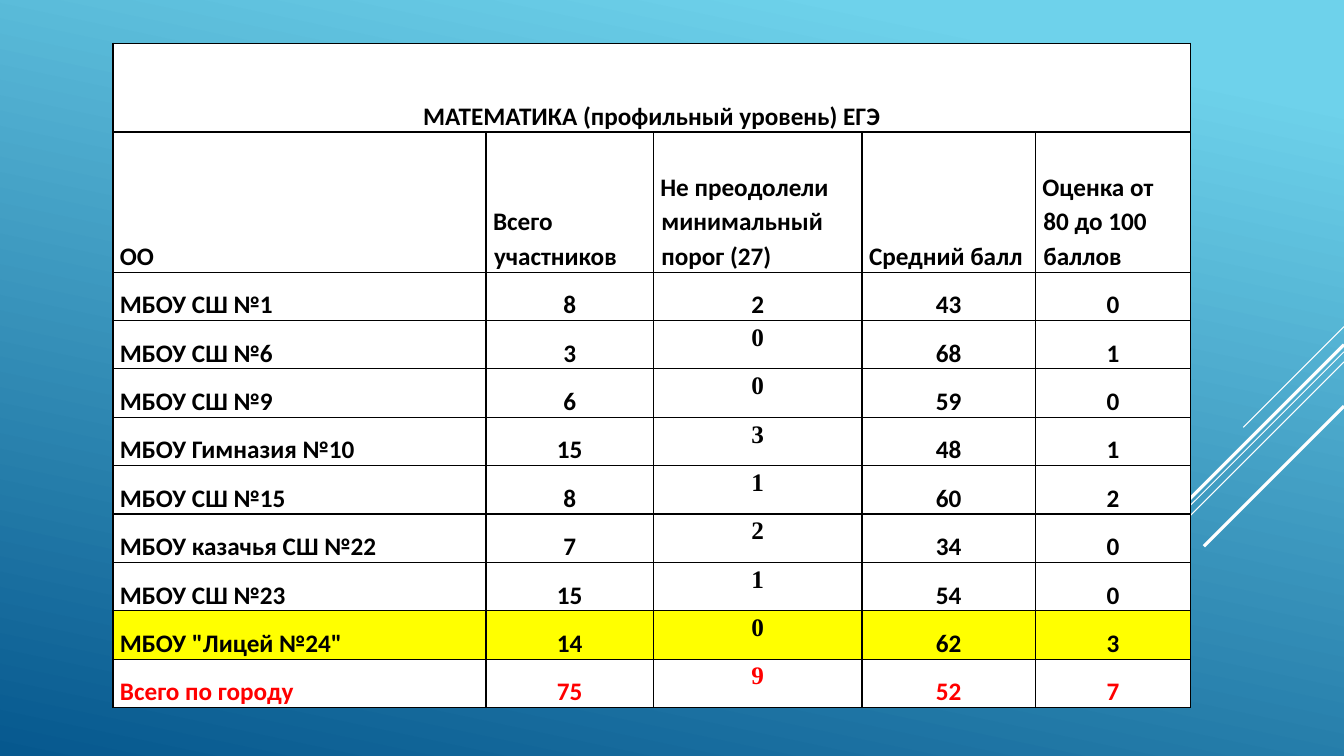
from lxml.etree import SubElement
from pptx import Presentation
from pptx.dml.color import RGBColor
from pptx.enum.shapes import MSO_CONNECTOR
from pptx.enum.text import MSO_ANCHOR, PP_ALIGN
from pptx.oxml.ns import qn
from pptx.util import Inches, Pt

COLORS = {
    "sky": "6ED2EB", "deep": "06588E", "white": "FFFFFF",
    "black": "000000", "highlight": "FFFF00", "total": "FF0000",
}
SLIDE_WIDTH, SLIDE_HEIGHT = 13.33, 7.5

TITLE = "МАТЕМАТИКА (профильный уровень) ЕГЭ"
HEADINGS = ["ОО", "Всего участников", "Не преодолели минимальный порог (27)",
            "Средний балл", "Оценка от 80 до 100 баллов"]
RESULTS = [
    ["МБОУ СШ №1", 8, 2, 43, 0],
    ["МБОУ СШ №6", 3, 0, 68, 1],
    ["МБОУ СШ №9", 6, 0, 59, 0],
    ["МБОУ Гимназия №10", 15, 3, 48, 1],
    ["МБОУ СШ №15", 8, 1, 60, 2],
    ["МБОУ казачья СШ №22", 7, 2, 34, 0],
    ["МБОУ СШ №23", 15, 1, 54, 0],
    ['МБОУ "Лицей №24"', 14, 0, 62, 3],
    ["Всего по городу", 75, 9, 52, 7],
]
COLUMN_WIDTHS = [3.7, 1.66, 2.07, 1.72, 1.54]
ROW_HEIGHTS = [0.88, 1.39] + [0.48] * len(RESULTS)
HIGHLIGHT_ROW, TOTAL_ROW = 9, 10
THRESHOLD_COLUMN = 2

# Height on the right edge, horizontal reach, line width
DIAGONALS = [(3.24, 1, 0.75), (3.49, 3.26, 0.75), (3.59, 2.07, 0.75),
             (3.42, 1.91, 2.25), (4.03, 1.39, 2.25)]


def apply_format(target, values):
    for attribute, value in values.items():
        setattr(target, attribute, value)


def rgb(name):
    return RGBColor.from_string(COLORS[name])


class ResultsSlide:
    cell_format = {"margin_left": Inches(0.07), "margin_right": Inches(0.07),
                   "margin_top": 0, "margin_bottom": 0}
    font_format = {"size": Pt(18), "bold": True}

    def __init__(self, presentation):
        self.slide = presentation.slides.add_slide(presentation.slide_layouts[6])

    def background(self, start, end, angle):
        fill = self.slide.background.fill
        fill.gradient()
        fill.gradient_angle = angle
        for stop, name, position in zip(fill.gradient_stops, (start, end), (0.1, 1)):
            stop.color.rgb = rgb(name)
            stop.position = position

    def diagonal(self, top, reach, width):
        """Draw a 45° line going down and left from the right edge."""
        line = self.slide.shapes.add_connector(
            MSO_CONNECTOR.STRAIGHT, Inches(SLIDE_WIDTH), Inches(top),
            Inches(SLIDE_WIDTH - reach), Inches(top + reach))
        line.line.color.rgb = rgb("white")
        line.line.width = Pt(width)
        SubElement(line._element.spPr, qn("a:effectLst"))

    def table(self, left, top, widths, heights):
        table = self.slide.shapes.add_table(
            len(heights), len(widths), Inches(left), Inches(top),
            Inches(sum(widths)), Inches(sum(heights))).table
        apply_format(table, {"first_row": False, "horz_banding": False})
        for column, width in zip(table.columns, widths):
            column.width = Inches(width)
        for row, height in zip(table.rows, heights):
            row.height = Inches(height)
        return table

    def border(self, cell):
        properties = cell._tc.get_or_add_tcPr()
        for side in ("a:lnL", "a:lnR", "a:lnT", "a:lnB"):
            edge = SubElement(properties, qn(side), w=str(Pt(1)))
            SubElement(SubElement(edge, qn("a:solidFill")), qn("a:srgbClr"),
                       val=COLORS["black"])

    def cell(self, cell, text, fill="white", color="black", centered=True, serif=False):
        """Style a cell; serif ones are set at the top with a little space after."""
        self.border(cell)
        cell.fill.solid()
        cell.fill.fore_color.rgb = rgb(fill)
        anchor = MSO_ANCHOR.TOP if serif else MSO_ANCHOR.BOTTOM
        apply_format(cell, {**self.cell_format, "vertical_anchor": anchor})
        paragraph = cell.text_frame.paragraphs[0]
        apply_format(paragraph, {
            "alignment": PP_ALIGN.CENTER if centered else PP_ALIGN.LEFT,
            "line_spacing": 1.12, "space_after": Pt(0.7 if serif else 0)})
        apply_format_xml = paragraph._p.get_or_add_pPr().set
        apply_format_xml("marL", str(Inches(0.01)))
        apply_format_xml("indent", str(Inches(-0.01)))
        if text:
            run = paragraph.add_run()
            run.text = text
            name = "Times New Roman" if serif else "Calibri"
            apply_format(run.font, {**self.font_format, "name": name})
            run.font.color.rgb = rgb(color)


def main():
    presentation = Presentation()
    apply_format(presentation, {"slide_width": Inches(SLIDE_WIDTH),
                                "slide_height": Inches(SLIDE_HEIGHT)})
    page = ResultsSlide(presentation)
    page.background("sky", "deep", 360 - 102)
    for diagonal in DIAGONALS:
        page.diagonal(*diagonal)

    results = page.table(1.12, 0.43, COLUMN_WIDTHS, ROW_HEIGHTS)
    title_row = [TITLE] + [""] * (len(HEADINGS) - 1)
    for row, values in enumerate([title_row, HEADINGS, *RESULTS]):
        for column, value in enumerate(values):
            page.cell(
                results.cell(row, column), str(value),
                fill="highlight" if row == HIGHLIGHT_ROW else "white",
                color="total" if row == TOTAL_ROW else "black",
                centered=row == 0 or (row > 1 and column > 0),
                serif=row > 2 and column == THRESHOLD_COLUMN)
    results.cell(0, 0).merge(results.cell(0, len(HEADINGS) - 1))
    presentation.save("out.pptx")


if __name__ == "__main__":
    main()
